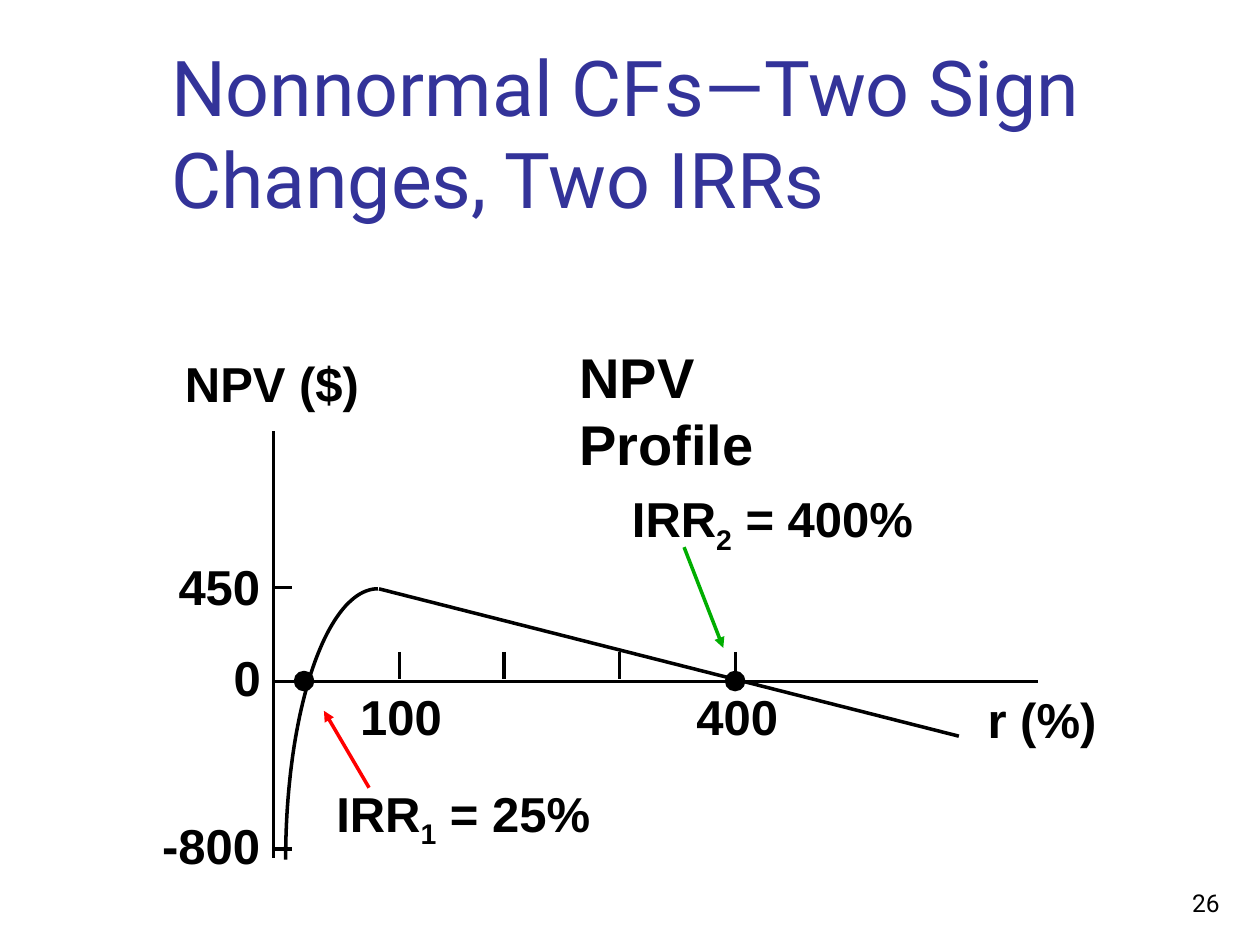
from math import cos, pi, sin

from lxml.etree import SubElement
from pptx import Presentation
from pptx.dml.color import RGBColor
from pptx.enum.shapes import MSO_CONNECTOR as Conn, MSO_SHAPE as Shape
from pptx.enum.text import MSO_ANCHOR as Anchor, PP_ALIGN as Align
from pptx.oxml.ns import qn
from pptx.util import Cm, Pt

BLACK = RGBColor(0x00, 0x00, 0x00)
BLUE = RGBColor(0x33, 0x33, 0x99)
GREEN = RGBColor(0x00, 0xAE, 0x00)
RED = RGBColor(0xFF, 0x00, 0x00)


def add_text(slide, box, runs, size, font="Arial", color=BLACK, bold=True,
             wrap=False, align=Align.LEFT, anchor=Anchor.TOP):
    frame = slide.shapes.add_textbox(*map(Cm, box)).text_frame
    frame.word_wrap = wrap
    frame.vertical_anchor = anchor
    para = frame.paragraphs[0]
    para.alignment = align
    for text, base in runs:
        run = para.add_run()
        run.text = text
        run.font.name = font
        run.font.size = Pt(size)
        run.font.bold = bold
        run.font.color.rgb = color
        if base:
            run.font._element.set("baseline", str(base))


def add_line(slide, start, end, color=BLACK, arrow=False):
    line = slide.shapes.add_connector(Conn.STRAIGHT, *map(Cm, start + end))
    line.line.color.rgb = color
    line.line.width = Pt(2)
    if arrow:
        SubElement(line.line._get_or_add_ln(), qn("a:tailEnd"), type="triangle")
    SubElement(line._element.spPr, qn("a:effectLst"))


def draw_title(slide, box):
    add_text(slide, box, [("Nonnormal CFs—Two Sign Changes, Two IRRs", 0)], 44,
             "Roboto", BLUE, False, True, anchor=Anchor.BOTTOM)


def draw_number(slide, box):
    add_text(slide, box, [("26", 0)], 14, "Roboto", BLACK, False, True,
             Align.RIGHT, Anchor.BOTTOM)


def draw_axes(slide, box):
    left, top, width, height = box
    zero = top + 5.05
    add_line(slide, (left, top), (left, top + height))
    add_line(slide, (left, zero), (left + width, zero))
    for y in (3.15, 8.43):
        add_line(slide, (left, top + y), (left + 0.38, top + y))
    for x in (2.54, 4.65, 6.98, 9.32):
        add_line(slide, (left + x, zero - 0.6), (left + x, zero - 0.05))


def draw_curve(slide, box):
    left, top = box[:2]
    steps, wide, high = 48, 1.86, 5.46
    foot = (left + 0.25, top + 8.64)
    turns = [pi / 2 * i / steps for i in range(steps + 1)]
    points = [(Cm(foot[0] + wide * (1 - cos(t))), Cm(foot[1] - high * sin(t)))
              for t in turns]
    pen = slide.shapes.build_freeform(*points[0])
    pen.add_line_segments(points[1:], close=False)
    curve = pen.convert_to_shape()
    curve.shadow.inherit = False
    curve.fill.background()
    curve.line.color.rgb = BLACK
    curve.line.width = Pt(2)
    add_line(slide, (left + 2.13, top + 3.18), (left + 13.82, top + 6.15))
    for x in (0.43, 9.12):
        dot = slide.shapes.add_shape(Shape.OVAL, Cm(left + x), Cm(top + 4.85),
                                     Cm(0.38), Cm(0.38))
        dot.shadow.inherit = False
        dot.fill.solid()
        dot.fill.fore_color.rgb = BLACK
        dot.line.color.rgb = BLACK
        dot.line.width = Pt(1)


def draw_labels(slide, box):
    left, top = box[:2]
    add_text(slide, (left + 5.92, top - 1.91, 6.35, 2.9),
             [("NPV Profile", 0)], 32, wrap=True)
    labels = [
        ("NPV ($)", -2.03, -1.68, 4.06),
        ("450", -2.16, 2.41, 2.16),
        ("0", -1.05, 4.24, 1.05),
        ("-800", -2.49, 7.62, 2.49),
        ("100", 1.5, 5.03, 2.16),
        ("400", 8.28, 5.03, 2.16),
        ("r (%)", 14.15, 5.08, 2.72),
    ]
    for text, x, y, wide in labels:
        add_text(slide, (left + x, top + y, wide, 1.42), [(text, 0)], 28)
    roots = [
        ("1", "25%", 1.02, 6.98, 5.69, (1.93, 7.19), (1.02, 5.64), RED),
        ("2", "400%", 6.98, 1.04, 6.22, (8.28, 2.34), (9.07, 4.37), GREEN),
    ]
    for sub, rate, x, y, wide, start, end, color in roots:
        add_text(slide, (left + x, top + y, wide, 1.42),
                 [("IRR", 0), (sub, -25000), (f" = {rate}", 0)], 28)
        add_line(slide, (left + start[0], top + start[1]),
                 (left + end[0], top + end[1]), color, True)


def main():
    deck = Presentation()
    deck.slide_width, deck.slide_height = Cm(25.4), Cm(19.05)
    slide = deck.slides.add_slide(deck.slide_layouts[6])
    graph = (5.51, 8.69, 15.42, 8.61)
    draw_title(slide, (3.2, 0.58, 21.64, 4.06))
    draw_axes(slide, graph)
    draw_curve(slide, graph)
    draw_labels(slide, graph)
    draw_number(slide, (19.56, 17.35, 5.28, 1.27))
    deck.save("out.pptx")


if __name__ == "__main__":
    main()
